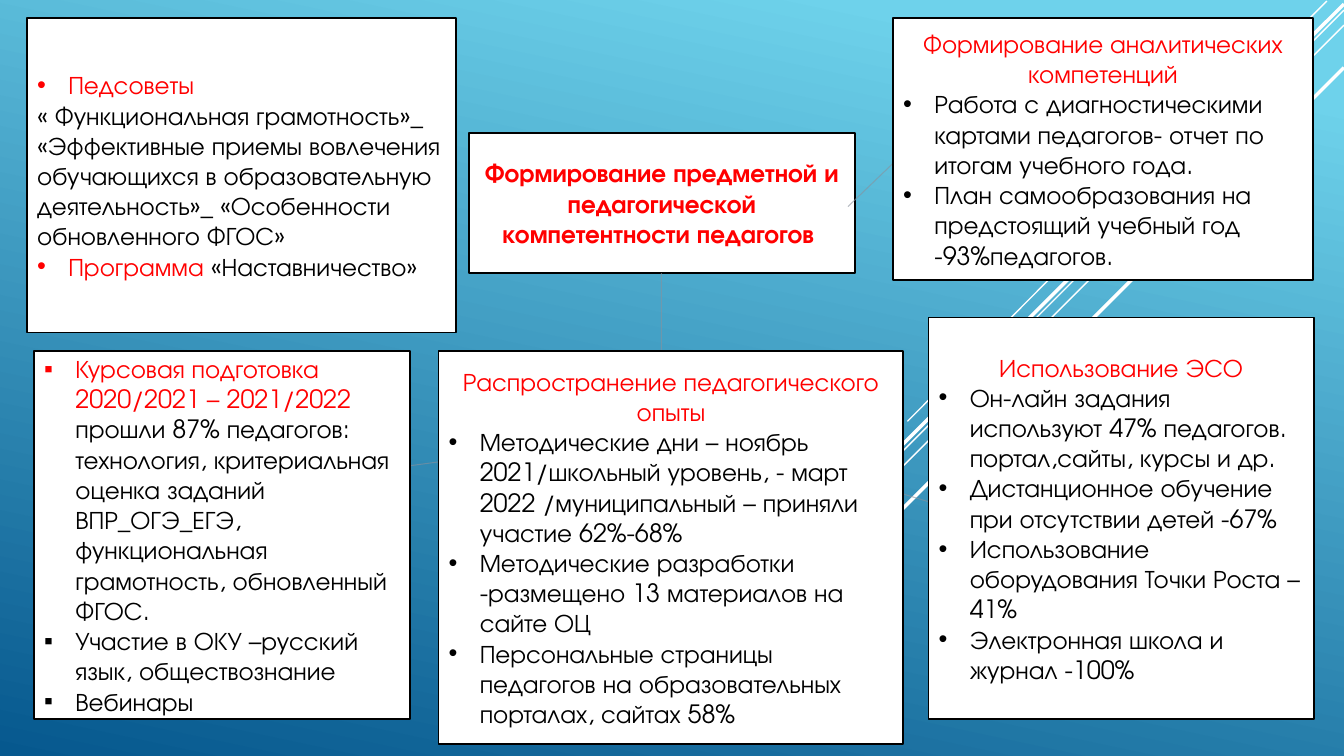
from lxml import etree
from pptx import Presentation
from pptx.dml.color import RGBColor
from pptx.enum.shapes import MSO_CONNECTOR, MSO_SHAPE
from pptx.enum.text import MSO_ANCHOR, MSO_AUTO_SIZE, PP_ALIGN
from pptx.oxml.ns import qn
from pptx.util import Inches, Pt

STRAIGHT = MSO_CONNECTOR.STRAIGHT
RECTANGLE = MSO_SHAPE.RECTANGLE
MIDDLE = MSO_ANCHOR.MIDDLE
NO_AUTOFIT = MSO_AUTO_SIZE.NONE
LEFT, CENTER = PP_ALIGN.LEFT, PP_ALIGN.CENTER

WHITE = RGBColor(0xFF, 0xFF, 0xFF)
BLACK = RGBColor(0x00, 0x00, 0x00)
RED = RGBColor(0xFF, 0x00, 0x00)
GRAY = RGBColor(0x89, 0x91, 0x9C)
SKY = RGBColor(0x6E, 0xD2, 0xEB)
DEEP_BLUE = RGBColor(0x06, 0x58, 0x8E)

FONT = "TeX Gyre Adventor"
BULLET_INDENT = Inches(0.31)

TITLE = "Формирование предметной и педагогической компетентности педагогов "

# Diagonal stripes: start x, start y, end x, end y, width in points
STRIPES = [
    (13.16, 0.01, 9, 4.18, 1),
    (13.33, 0.1, 6.68, 6.75, 1),
    (13.33, 0.25, 7.91, 5.67, 1),
    (13.33, 0.04, 8.02, 5.34, 2.5),
    (13.33, 0.67, 8.58, 5.42, 2.5),
]

# Arrows between the topics: start x, start y, end x, end y
ARROWS = [
    (8.41, 2.05, 9.67, 0.84),
    (4.52, 4.56, 2.72, 4.8),
    (8.33, 4.71, 10.27, 5.3),
    (6.56, 2.71, 6.56, 4.83),
]

# Cards: position and paragraphs of (bullet, alignment, red text, black text)
CARDS = [
    ((0.27, 0.18, 4.25, 3.12), [
        ("•", LEFT, "Педсоветы", ""),
        ("", LEFT, "", "« Функциональная грамотность»_ «Эффективные приемы вовлечения "
         "обучающихся в образовательную деятельность»_ «Особенности обновленного ФГОС»"),
        ("•", LEFT, "Программа", " «Наставничество»"),
    ]),
    ((8.86, 0.18, 4.16, 2.6), [
        ("", CENTER, "Формирование аналитических компетенций", ""),
        ("•", LEFT, "", "Работа с диагностическими картами педагогов- отчет по итогам "
         "учебного года."),
        ("•", LEFT, "", "План самообразования на предстоящий учебный год -93%педагогов."),
    ]),
    ((0.34, 3.48, 3.73, 3.65), [
        ("▪", LEFT, "Курсовая подготовка 2020/2021 – 2021/2022 ",
         "прошли 87% педагогов: технология, критериальная оценка заданий ВПР_ОГЭ_ЕГЭ, "
         "функциональная грамотность, обновленный ФГОС."),
        ("▪", LEFT, "", "Участие в ОКУ –русский язык, обществознание"),
        ("▪", LEFT, "", "Вебинары"),
    ]),
    ((4.35, 3.48, 4.61, 3.9), [
        ("", CENTER, "Распространение педагогического опыты", ""),
        ("•", LEFT, "", "Методические дни – ноябрь 2021/школьный уровень, - март 2022 "
         "/муниципальный – приняли участие 62%-68%"),
        ("•", LEFT, "", "Методические разработки -размещено 13 материалов на сайте ОЦ"),
        ("•", LEFT, "", "Персональные страницы педагогов на образовательных порталах, "
         "сайтах 58%"),
    ]),
    ((9.21, 3.15, 3.82, 3.98), [
        ("", CENTER, "Использование ЭСО", ""),
        ("•", LEFT, "", "Он-лайн задания используют 47% педагогов. "
         "портал,сайты, курсы и др."),
        ("•", LEFT, "", "Дистанционное обучение при отсутствии детей -67%"),
        ("•", LEFT, "", "Использование оборудования Точки Роста – 41%"),
        ("•", LEFT, "", "Электронная школа и журнал -100%"),
    ]),
]


def paint_background(slide):
    fill = slide.background.fill
    fill.gradient()
    fill.gradient_angle = 360 - 102
    for stop, color, position in zip(fill.gradient_stops, (SKY, DEEP_BLUE), (0.1, 1)):
        stop.color.rgb = color
        stop.position = position


def add_line(slide, ends, color, width, alpha=None, arrow=False):
    connector = slide.shapes.add_connector(STRAIGHT, *(Inches(value) for value in ends))
    connector.line.color.rgb = color
    connector.line.width = Pt(width)
    properties = connector._element.spPr
    if alpha:
        color_element = properties.find(".//" + qn("a:srgbClr"))
        etree.SubElement(color_element, qn("a:alpha"), val=str(alpha * 1000))
    if arrow:
        etree.SubElement(properties.find(qn("a:ln")), qn("a:tailEnd"), type="triangle")
    etree.SubElement(properties, qn("a:effectLst"))


def add_text(paragraph, text, color=BLACK, bold=False):
    run = paragraph.add_run()
    run.text = text
    run.font.name = FONT
    run.font.size = Pt(18)
    run.font.bold = bold
    run.font.color.rgb = color


def set_bullet(paragraph, character):
    properties = paragraph._p.get_or_add_pPr()
    properties.set("marL", str(BULLET_INDENT))
    properties.set("indent", str(-BULLET_INDENT))
    etree.SubElement(properties, qn("a:buFont"), typeface="Arial")
    etree.SubElement(properties, qn("a:buChar"), char=character)


def style_box(shape):
    shape.fill.solid()
    shape.fill.fore_color.rgb = WHITE
    shape.line.color.rgb = BLACK
    shape.line.width = Pt(1.25)
    shape.shadow.inherit = False
    frame = shape.text_frame
    frame.word_wrap = True
    frame.auto_size = NO_AUTOFIT
    frame.vertical_anchor = MIDDLE


def format_title(title):
    title.left, title.top = Inches(4.65), Inches(1.32)
    title.width, title.height = Inches(3.83), Inches(1.39)
    # Rounded outline for the title placeholder
    geometry = etree.Element(qn("a:prstGeom"), prst="roundRect")
    etree.SubElement(geometry, qn("a:avLst"))
    title._element.spPr.insert(1, geometry)
    style_box(title)
    paragraph = title.text_frame.paragraphs[0]
    paragraph.alignment = CENTER
    add_text(paragraph, TITLE, color=RED, bold=True)


def add_card(slide, position, paragraphs):
    card = slide.shapes.add_shape(RECTANGLE, *(Inches(value) for value in position))
    style_box(card)
    frame = card.text_frame
    for index, (bullet, alignment, red_text, black_text) in enumerate(paragraphs):
        paragraph = frame.add_paragraph() if index else frame.paragraphs[0]
        paragraph.alignment = alignment
        if bullet:
            set_bullet(paragraph, bullet)
        for text, color in ((red_text, RED), (black_text, BLACK)):
            if text:
                add_text(paragraph, text, color=color)


def main():
    presentation = Presentation()
    presentation.slide_width = Inches(13.33)
    presentation.slide_height = Inches(7.5)
    slide = presentation.slides.add_slide(presentation.slide_layouts[5])

    # Backdrop
    paint_background(slide)
    for *ends, width in STRIPES:
        add_line(slide, ends, WHITE, width)

    # Central topic and its arrows
    format_title(slide.shapes.title)
    for ends in ARROWS:
        add_line(slide, ends, GRAY, 0.75, alpha=60, arrow=True)

    # Cards around the topic
    for position, paragraphs in CARDS:
        add_card(slide, position, paragraphs)

    presentation.save("out.pptx")


if __name__ == "__main__":
    main()
